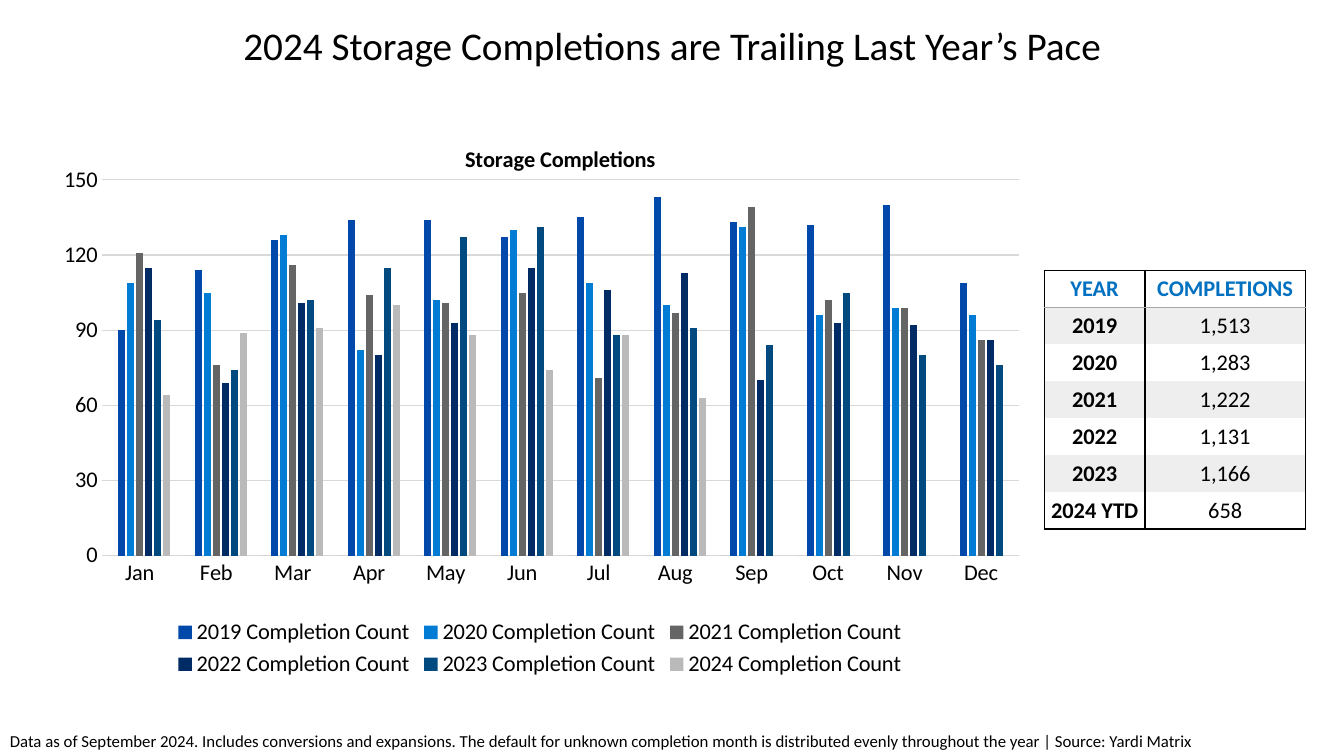
import pptx
import pptx.chart.data
import pptx.dml.color
import pptx.enum.chart
import pptx.enum.text
import pptx.oxml
import pptx.oxml.ns
import pptx.util

Pt = pptx.util.Pt
ALIGN = pptx.enum.text.PP_ALIGN
ANCHOR = pptx.enum.text.MSO_ANCHOR
MONTHS = ["Jan", "Feb", "Mar", "Apr", "May", "Jun", "Jul", "Aug", "Sep", "Oct", "Nov", "Dec"]
SERIES = [
    ("Series 1", "A9A9A9", [0] * 12),
    ("2019 Completion Count", "0048A9", [90, 114, 126, 134, 134, 127, 135, 143, 133, 132, 140, 109]),
    ("2020 Completion Count", "007CD5", [109, 105, 128, 82, 102, 130, 109, 100, 131, 96, 99, 96]),
    ("2021 Completion Count", "656565", [121, 76, 116, 104, 101, 105, 71, 97, 139, 102, 99, 86]),
    ("2022 Completion Count", "002B65", [115, 69, 101, 80, 93, 115, 106, 113, 70, 93, 92, 86]),
    ("2023 Completion Count", "004A80", [94, 74, 102, 115, 127, 131, 88, 91, 84, 105, 80, 76]),
    ("2024 Completion Count", "BABABA", [64, 89, 91, 100, 88, 74, 88, 63] + [None] * 4),
]
TOTALS = [
    ("YEAR", "COMPLETIONS"),
    ("2019", "1,513"),
    ("2020", "1,283"),
    ("2021", "1,222"),
    ("2022", "1,131"),
    ("2023", "1,166"),
    ("2024 YTD", "658"),
]


def color(value):
    return pptx.dml.color.RGBColor.from_string(value)


def chart_element(markup):
    namespace = pptx.oxml.ns.nsdecls("c")
    return pptx.oxml.parse_xml(markup.replace(">", f" {namespace}>", 1))


def place(parent, index, target, **fractions):
    for layout in parent.findall(pptx.oxml.ns.qn("c:layout")):
        parent.remove(layout)
    modes = "".join(f'<c:{axis}Mode val="edge"/>' for axis in "xy")
    values = "".join(f'<c:{key} val="{value}"/>' for key, value in fractions.items())
    parent.insert(index, chart_element(
        f"<c:layout><c:manualLayout>{target}{modes}{values}</c:manualLayout></c:layout>"))


class SlideBuilder:
    font_name = "Calibri"
    ink = "000000"
    rule = "D9D9D9"
    body_size = 16

    def __init__(self, slide):
        self.slide = slide

    def style(self, font, size, ink=ink, bold=False):
        font.name = self.font_name
        font.size = Pt(size)
        font.bold = bold
        font.color.rgb = color(ink)

    def add_text(self, frame, text, size, align, ink=ink, bold=False):
        paragraph = frame.paragraphs[0]
        paragraph.alignment = align
        run = paragraph.add_run()
        run.text = text
        self.style(run.font, size, ink, bold)
        return paragraph

    def text(self, text, left, top, width, height, size, align):
        shape = self.slide.shapes.add_textbox(Pt(left), Pt(top), Pt(width), Pt(height))
        frame = shape.text_frame
        frame.word_wrap = True
        frame.vertical_anchor = ANCHOR.MIDDLE
        return self.add_text(frame, text, size, align)

    def line(self, line, ink):
        line.width = Pt(0.75)
        line.color.rgb = color(ink)

    def column_chart(self, title, categories, series, left, top, width, height):
        data = pptx.chart.data.CategoryChartData()
        data.categories = categories
        for name, _, values in series:
            data.add_series(name, values)
        chart = self.slide.shapes.add_chart(
            pptx.enum.chart.XL_CHART_TYPE.COLUMN_CLUSTERED,
            Pt(left), Pt(top), Pt(width), Pt(height), data).chart
        self.style(chart.font, self.body_size)
        self.add_text(chart.chart_title.text_frame, title, self.body_size, ALIGN.CENTER, bold=True)

        plot = chart.plots[0]
        plot.vary_by_categories = False
        plot.gap_width = 219
        plot.overlap = -27
        for column, (_, fill, _) in zip(plot.series, series):
            column.format.fill.solid()
            column.format.fill.fore_color.rgb = color(fill)
            column.invert_if_negative = False

        for axis in (chart.category_axis, chart.value_axis):
            axis.major_tick_mark = pptx.enum.chart.XL_TICK_MARK.NONE
            self.style(axis.tick_labels.font, self.body_size)
        self.line(chart.category_axis.format.line, self.rule)
        value_axis = chart.value_axis
        value_axis.minimum_scale = 0
        value_axis.maximum_scale = 150
        value_axis.major_unit = 30
        value_axis.format.line.fill.background()
        self.line(value_axis.major_gridlines.format.line, self.rule)

        chart.has_legend = True
        legend = chart.legend
        legend.position = pptx.enum.chart.XL_LEGEND_POSITION.BOTTOM
        legend.include_in_layout = False
        self.style(legend.font, self.body_size)
        root = chart._chartSpace
        root.find(".//" + pptx.oxml.ns.qn("c:legendPos")).addnext(chart_element(
            '<c:legendEntry><c:idx val="0"/><c:delete val="1"/></c:legendEntry>'))
        place(root.find(".//" + pptx.oxml.ns.qn("c:title")), 1, "", x=0.42, y=0.02)
        place(root.find(".//" + pptx.oxml.ns.qn("c:plotArea")), 0,
              '<c:layoutTarget val="inner"/>', x=0.055, y=0.092, w=0.932, h=0.679)

    def borders(self, cell, sides):
        properties = cell._tc.get_or_add_tcPr()
        namespace = pptx.oxml.ns.nsdecls("a")
        for side in "LRTB":
            ink = sides.get(side)
            fill = f'<a:solidFill><a:srgbClr val="{ink}"/></a:solidFill>' if ink else "<a:noFill/>"
            properties.append(pptx.oxml.parse_xml(
                f'<a:ln{side} {namespace} w="{Pt(1)}">{fill}</a:ln{side}>'))

    def table(self, rows, left, top, widths, row_height):
        table = self.slide.shapes.add_table(
            len(rows), len(widths), Pt(left), Pt(top),
            Pt(sum(widths)), Pt(row_height * len(rows))).table
        table.first_row = table.horz_banding = False
        for column, width in zip(table.columns, widths):
            column.width = Pt(width)
        last = len(rows) - 1
        edges = {0: {"T": self.ink, "B": "A9A9A9"}, 1: {"T": "A9A9A9"}, last: {"B": self.ink}}
        for row_index, values in enumerate(rows):
            table.rows[row_index].height = Pt(row_height)
            header = row_index == 0
            for column_index, value in enumerate(values):
                cell = table.cell(row_index, column_index)
                label = header or column_index == 0
                inset = Pt(3.6 if label else 0.72)
                cell.margin_left = cell.margin_right = inset
                cell.margin_top = cell.margin_bottom = inset
                cell.vertical_anchor = ANCHOR.MIDDLE if header or not label else ANCHOR.BOTTOM
                self.borders(cell, {"L": self.ink, "R": self.ink, **edges.get(row_index, {})})
                cell.fill.solid()
                cell.fill.fore_color.rgb = color("EEEEEE" if row_index % 2 else "FFFFFF")
                self.add_text(cell.text_frame, value, self.body_size, ALIGN.CENTER,
                              "0070C0" if header else self.ink, label)


def main():
    presentation = pptx.Presentation()
    presentation.slide_width = Pt(960)
    presentation.slide_height = Pt(540)
    builder = SlideBuilder(presentation.slides.add_slide(presentation.slide_layouts[6]))
    builder.column_chart("Storage Completions", MONTHS, SERIES, 33.84, 92.16, 703.44, 395.28)
    title = builder.text("2024 Storage Completions are Trailing Last Year’s Pace",
                         0, 15.84, 960, 36, 28, ALIGN.CENTER)
    title.line_spacing = 0.9
    builder.text("Data as of September 2024. Includes conversions and expansions. "
                 "The default for unknown completion month is distributed evenly "
                 "throughout the year | Source: Yardi Matrix",
                 0, 518.4, 964.8, 21.6, 12, ALIGN.LEFT)
    builder.table(TOTALS, 745.92, 192.96, [72, 114.48], 26.4)
    presentation.save("out.pptx")


if __name__ == "__main__":
    main()
